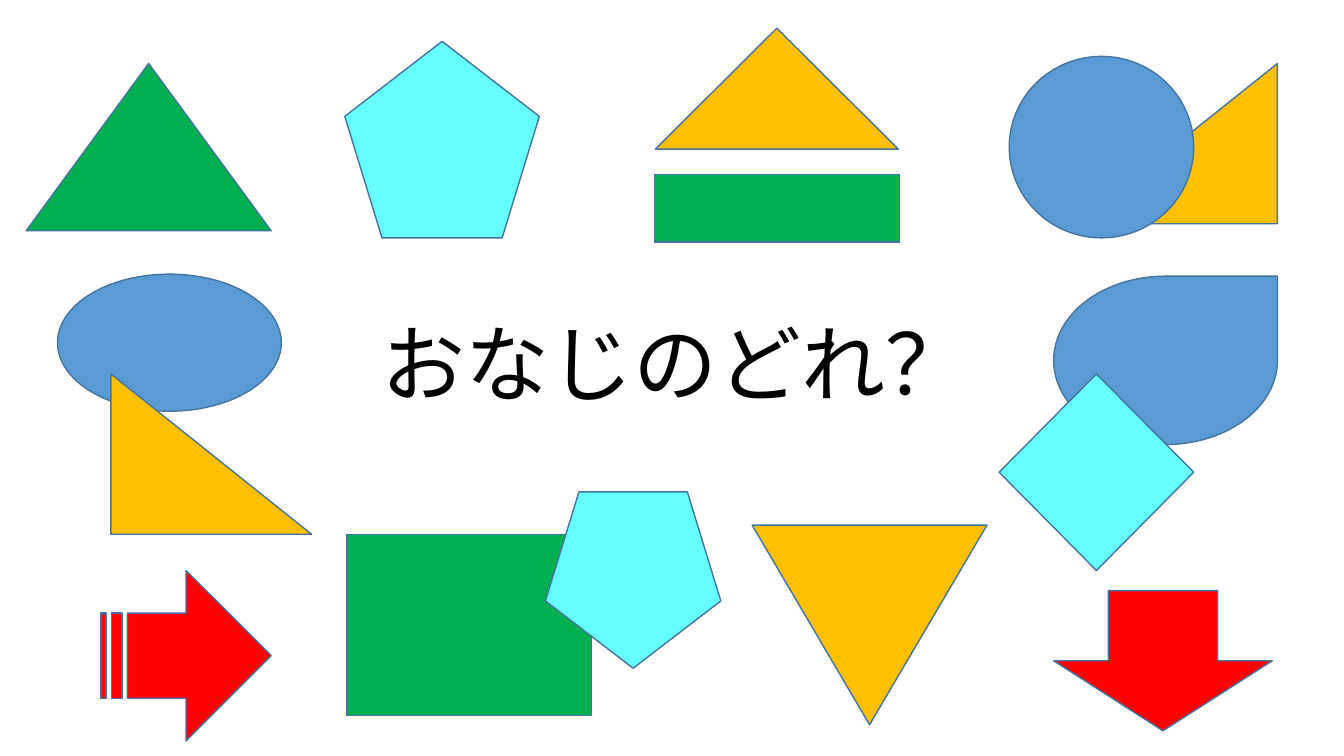
from pptx import Presentation
from pptx.dml.color import RGBColor
from pptx.enum.shapes import MSO_SHAPE as SHAPE
from pptx.enum.text import MSO_ANCHOR, MSO_AUTO_SIZE, PP_ALIGN
from pptx.oxml.ns import qn
from pptx.util import Inches, Pt
from lxml.etree import SubElement

QUESTION = "おなじのどれ？"
FONT = "Noto Sans CJK JP"
COLORS = {
    "green": "00B050", "blue": "5B9BD5", "orange": "FFC000",
    "red": "FF0000", "cyan": "66FFFF", "outline": "43739E", "text": "000000",
}

# Figures from back to front: kind, colour, (left, top, width, height), flip
FIGURES = [
    (SHAPE.RECTANGLE, "green", (3.44, 5.3, 2.43, 1.8), None),
    (SHAPE.ISOSCELES_TRIANGLE, "green", (0.26, 0.63, 2.43, 1.66), None),
    (SHAPE.RECTANGLE, "green", (6.49, 1.73, 2.43, 0.67), None),
    (SHAPE.OVAL, "blue", (0.57, 2.72, 2.22, 1.36), None),
    (SHAPE.TEAR, "blue", (10.45, 2.74, 2.22, 1.67), None),
    (SHAPE.RIGHT_TRIANGLE, "orange", (1.1, 3.71, 1.99, 1.59), None),
    (SHAPE.ISOSCELES_TRIANGLE, "orange", (6.5, 0.28, 2.41, 1.2), None),
    (SHAPE.RIGHT_TRIANGLE, "orange", (10.68, 0.63, 1.99, 1.59), "flipH"),
    (SHAPE.OVAL, "blue", (10.01, 0.56, 1.83, 1.8), None),
    (SHAPE.DOWN_ARROW, "red", (10.45, 5.86, 2.17, 1.39), None),
    (SHAPE.REGULAR_PENTAGON, "cyan", (3.42, 0.41, 1.93, 1.95), None),
    (SHAPE.DIAMOND, "cyan", (9.91, 3.71, 1.93, 1.95), None),
    (SHAPE.STRIPED_RIGHT_ARROW, "red", (1, 5.66, 1.69, 1.69), None),
    (SHAPE.ISOSCELES_TRIANGLE, "orange", (7.46, 5.21, 2.33, 1.98), "flipV"),
    (SHAPE.REGULAR_PENTAGON, "cyan", (5.41, 4.88, 1.74, 1.75), "flipV"),
]


def color(name):
    return RGBColor.from_string(COLORS[name])


def add_question(slide):
    title = slide.shapes.title
    title.left, title.top = Inches(1.7), Inches(2.97)
    title.width, title.height = Inches(10), Inches(1.18)
    frame = title.text_frame
    frame.auto_size = MSO_AUTO_SIZE.NONE
    frame.word_wrap = True
    frame.vertical_anchor = MSO_ANCHOR.BOTTOM
    line = frame.paragraphs[0]
    line.alignment = PP_ALIGN.CENTER
    line.line_spacing = 0.9
    run = line.add_run()
    run.text = QUESTION
    run.font.size = Pt(60)
    run.font.name = FONT
    run.font.color.rgb = color("text")
    # Japanese characters take the East Asian typeface
    SubElement(run.font._element, qn("a:ea")).set("typeface", FONT)


def add_figure(slide, kind, fill, box, flip):
    figure = slide.shapes.add_shape(kind, *map(Inches, box))
    figure.shadow.inherit = False
    figure.fill.solid()
    figure.fill.fore_color.rgb = color(fill)
    figure.line.color.rgb = color("outline")
    figure.line.width = Pt(1)
    if flip:
        figure._element.spPr.xfrm.set(flip, "1")


def main():
    deck = Presentation()
    deck.slide_width, deck.slide_height = Inches(13.33), Inches(7.5)
    slide = deck.slides.add_slide(deck.slide_layouts[5])
    add_question(slide)
    for figure in FIGURES:
        add_figure(slide, *figure)
    deck.save("out.pptx")


if __name__ == "__main__":
    main()
